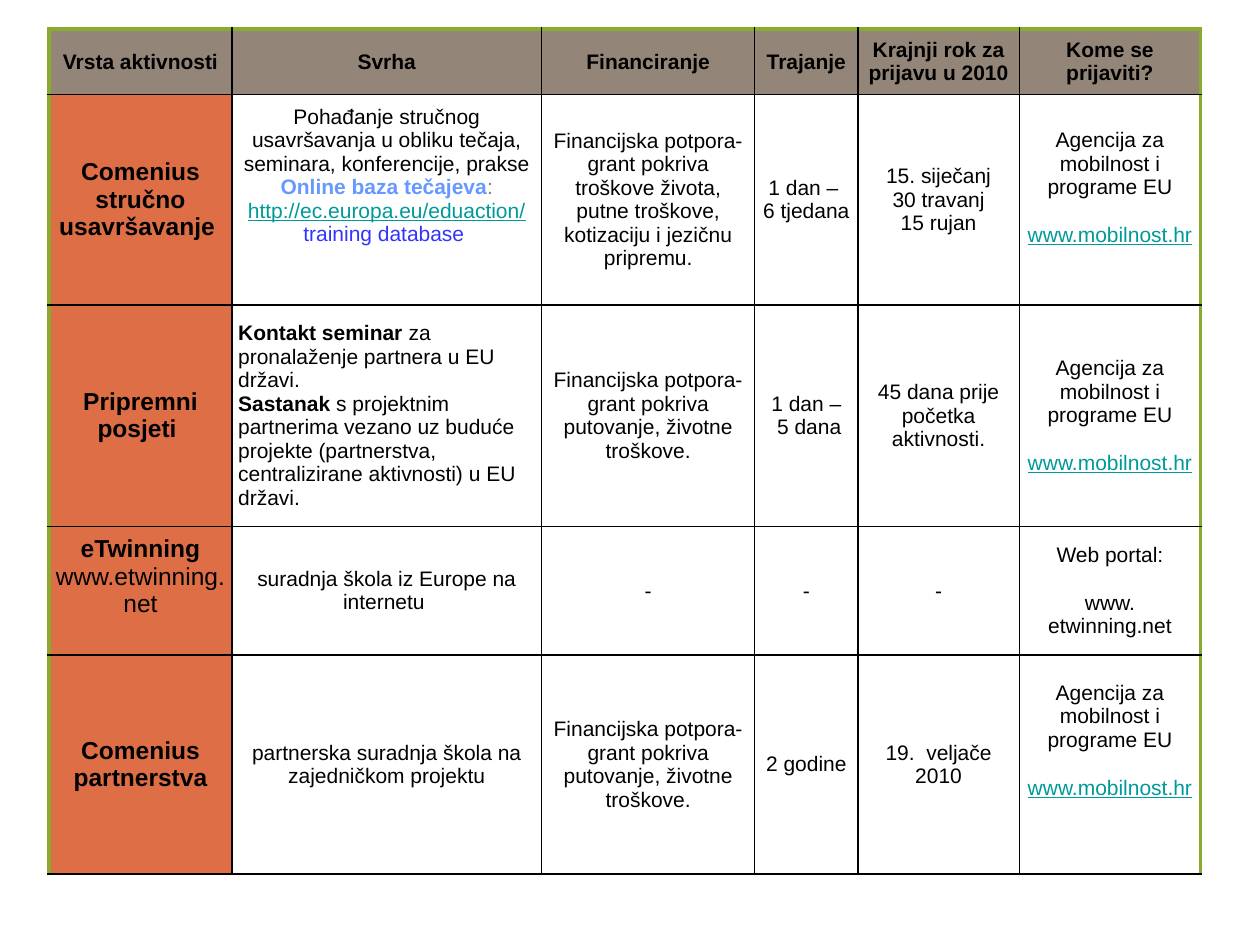
from pptx import Presentation
from pptx.dml.color import RGBColor
from pptx.enum.text import MSO_ANCHOR as Anchor, PP_ALIGN as Align
from pptx.oxml import parse_xml
from pptx.oxml.ns import nsdecls
from pptx.util import Pt

BLACK, GREEN, TEAL = "000000", "89AC2E", "009999"
LINE = 13.8


def color(value):
    return RGBColor.from_string(value)


def add_border(cell, side, value, width):
    cell._tc.get_or_add_tcPr().append(parse_xml(
        f'<a:ln{side} {nsdecls("a")} w="{Pt(width)}"><a:solidFill>'
        f'<a:srgbClr val="{value}"/></a:solidFill></a:ln{side}>'))


headers = ["Vrsta aktivnosti", "Svrha", "Financiranje", "Trajanje",
           "Krajnji rok za prijavu u 2010", "Kome se prijaviti?"]
agency = ["Agencija za mobilnost i programe EU",
          [("www.mobilnost.hr", TEAL, False, True)]]
travel_grant = ["Financijska potpora-grant pokriva putovanje, životne troškove."]

rows = [
    [[header] for header in headers],
    [
        ["Comenius stručno usavršavanje "],
        ["Pohađanje stručnog usavršavanja u obliku tečaja, seminara, konferencije, prakse",
         [("Online baza tečajeva", "6699FF", True, False),
          (": ", "808080", False, False),
          ("http://ec.europa.eu/eduaction/", TEAL, False, True)],
         [("training database ", "3333FF", False, False)]],
        ["Financijska potpora-grant pokriva troškove života, putne troškove, "
         "kotizaciju i jezičnu pripremu."],
        ["1 dan – ", "6 tjedana"],
        ["15. siječanj", "30 travanj", "15 rujan"],
        agency,
    ],
    [
        ["Pripremni posjeti "],
        [[("Kontakt seminar ", BLACK, True, False),
          ("za pronalaženje partnera u EU državi.", BLACK, False, False)],
         [("Sastanak", BLACK, True, False),
          (" s projektnim partnerima vezano uz buduće projekte (partnerstva, "
           "centralizirane aktivnosti) u EU državi.", BLACK, False, False)]],
        travel_grant,
        ["1 dan –", " 5 dana"],
        ["45 dana prije početka aktivnosti."],
        agency,
    ],
    [
        ["eTwinning", [("www.etwinning.net", BLACK, False, False)]],
        ["suradnja škola iz Europe na internetu "],
        ["-"],
        ["-"],
        ["-"],
        ["Web portal:", "www.", "etwinning.net"],
    ],
    [
        ["Comenius partnerstva"],
        ["partnerska suradnja škola na zajedničkom projektu"],
        travel_grant,
        ["2 godine"],
        ["19.  veljače 2010"],
        agency,
    ],
]
column_widths = [104.4, 177.1, 121.7, 59, 92.2, 103.7]
row_heights = [37.4, 120.2, 126.7, 73.4, 125.3]
bottom_margins = {(1, 1): 2 * LINE, (1, 5): LINE, (3, 0): 16, (4, 5): 2 * LINE}
last_column = len(headers) - 1

presentation = Presentation()
presentation.slide_width, presentation.slide_height = Pt(720), Pt(540)
slide = presentation.slides.add_slide(presentation.slide_layouts[6])

table = slide.shapes.add_table(
    len(rows), len(headers), Pt(28.1), Pt(16.6),
    Pt(sum(column_widths)), Pt(sum(row_heights))).table
table.horz_banding = False
table.first_row = False
for column, width in zip(table.columns, column_widths):
    column.width = Pt(width)
for row, height in zip(table.rows, row_heights):
    row.height = Pt(height)

for r, row in enumerate(rows):
    for c, paragraphs in enumerate(row):
        cell = table.cell(r, c)
        cell.vertical_anchor = Anchor.MIDDLE
        cell.margin_left = cell.margin_right = Pt(3.6)
        cell.margin_top = 0
        cell.margin_bottom = Pt(bottom_margins.get((r, c), 0))

        outer_sides = {"L": c == 0, "R": c == last_column, "T": r == 0, "B": False}
        for side, outer in outer_sides.items():
            add_border(cell, side, *((GREEN, 2.25) if outer else (BLACK, 1)))

        if r == 0 or c == 0:
            cell.fill.solid()
            cell.fill.fore_color.rgb = color("938678" if r == 0 else "DE6E46")
        else:
            cell.fill.background()

        frame = cell.text_frame
        for i, runs in enumerate(paragraphs):
            paragraph = frame.add_paragraph() if i else frame.paragraphs[0]
            paragraph.alignment = Align.LEFT if (r, c) == (2, 1) else Align.CENTER
            if c == last_column and i == 1:
                paragraph.space_before = Pt(LINE)
            if isinstance(runs, str):
                runs = [(runs, BLACK, r == 0 or c == 0, False)]
            for text, text_color, bold, underline in runs:
                run = paragraph.add_run()
                run.text = text
                run.font.name = "Arial"
                run.font.size = Pt(14 if r and c == 0 else 12)
                run.font.bold = bold
                run.font.underline = underline
                run.font.color.rgb = color(text_color)

presentation.save("out.pptx")
